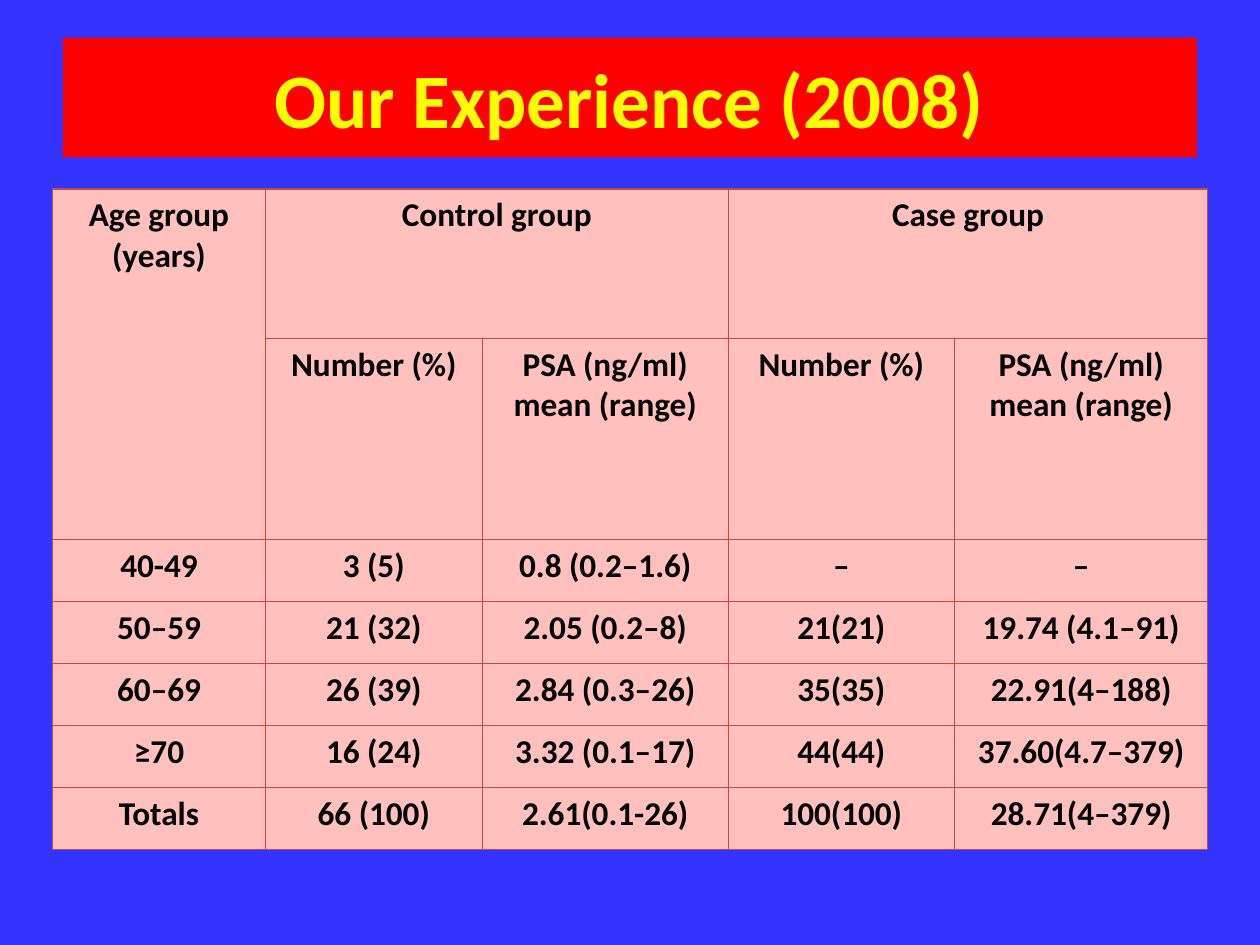
from lxml.etree import SubElement
from pptx import Presentation
from pptx.dml.color import RGBColor
from pptx.enum.shapes import MSO_SHAPE
from pptx.enum.text import MSO_ANCHOR, PP_ALIGN
from pptx.oxml.ns import qn
from pptx.util import Cm, Pt


def paint(fill, color):
    fill.solid()
    fill.fore_color.rgb = RGBColor.from_string(color)


def write(frame, text, size, color):
    """Fill a text frame with centred bold lines."""
    frame.text = text
    for paragraph in frame.paragraphs:
        paragraph.alignment = PP_ALIGN.CENTER
        for run in paragraph.runs:
            run.font.name = "Calibri"
            run.font.size = Pt(size)
            run.font.bold = True
            paint(run.font.fill, color)


prs = Presentation()
prs.slide_width, prs.slide_height = Cm(25.4), Cm(19.05)
slide = prs.slides.add_slide(prs.slide_layouts[6])
paint(slide.background.fill, "3333FF")

title = slide.shapes.add_shape(
    MSO_SHAPE.RECTANGLE, Cm(1.27), Cm(0.76), Cm(22.86), Cm(2.41))
title.shadow.inherit = False
paint(title.fill, "FF0000")
title.line.fill.background()
title.text_frame.vertical_anchor = MSO_ANCHOR.MIDDLE
write(title.text_frame, "Our Experience (2008)", 44, "FFFF00")

psa_heading = "PSA (ng/ml)\nmean (range)"
results = [
    ["Age group\n(years)", "Control group", "", "Case group", ""],
    ["", "Number (%)", psa_heading, "Number (%)", psa_heading],
    ["40-49", "3 (5)", "0.8 (0.2–1.6)", "–", "–"],
    ["50–59", "21 (32)", "2.05 (0.2–8)", "21(21)", "19.74 (4.1–91)"],
    ["60–69", "26 (39)", "2.84 (0.3–26)", "35(35)", "22.91(4–188)"],
    ["≥70", "16 (24)", "3.32 (0.1–17)", "44(44)", "37.60(4.7–379)"],
    ["Totals", "66 (100)", "2.61(0.1-26)", "100(100)", "28.71(4–379)"],
]
column_widths = [4.29, 4.37, 4.96, 4.56, 5.11]
row_heights = [3.01, 4.06] + [1.25] * 5

psa_table = slide.shapes.add_table(
    len(row_heights), len(column_widths), Cm(1.06), Cm(3.81),
    Cm(sum(column_widths)), Cm(sum(row_heights))).table
for column, width in zip(psa_table.columns, column_widths):
    column.width = Cm(width)
for row, height in zip(psa_table.rows, row_heights):
    row.height = Cm(height)

for r, values in enumerate(results):
    for c, value in enumerate(values):
        cell = psa_table.cell(r, c)
        write(cell.text_frame, value, 19, "000000")
        properties = cell._tc.get_or_add_tcPr()
        for side in ("a:lnL", "a:lnR", "a:lnT", "a:lnB"):
            border = SubElement(properties, qn(side), w=str(Pt(0.75)))
            border_fill = SubElement(border, qn("a:solidFill"))
            SubElement(border_fill, qn("a:srgbClr"), val="BF4C48")
        paint(cell.fill, "FFC0BE")

psa_table.cell(0, 0).merge(psa_table.cell(1, 0))
for first in (1, 3):
    psa_table.cell(0, first).merge(psa_table.cell(0, first + 1))

prs.save("out.pptx")
